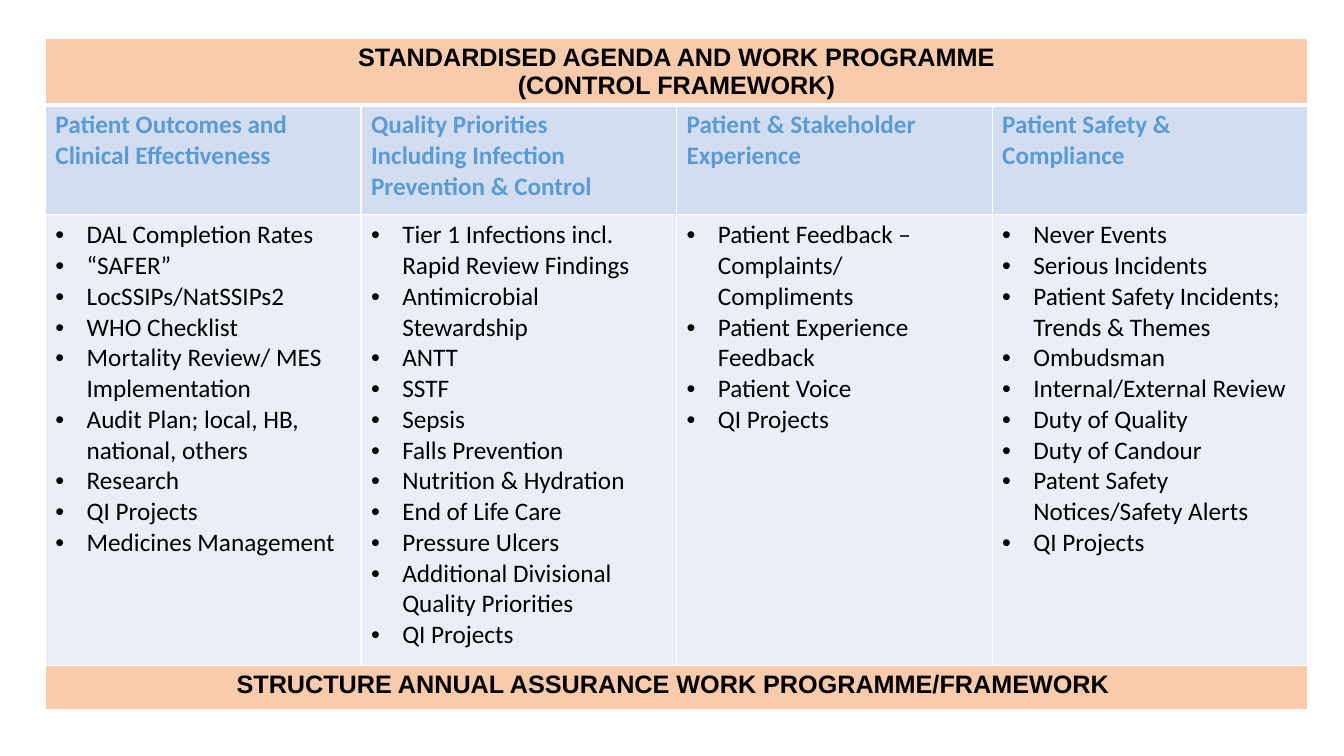
from lxml import etree
from pptx import Presentation
from pptx.dml.color import RGBColor
from pptx.enum import text
from pptx.oxml import ns
from pptx.util import Inches, Pt

BANNER_FILL, HEADING_FILL, TOPIC_FILL = "F8CBAD", "D2DEEF", "EAEFF7"
BLACK, BLUE, WHITE = "000000", "5B9BD5", "FFFFFF"
INDENT = Inches(0.31)

TITLE = ["STANDARDISED AGENDA AND WORK PROGRAMME", "(CONTROL FRAMEWORK)"]
FOOTER = ["STRUCTURE ANNUAL ASSURANCE WORK PROGRAMME/FRAMEWORK "]
COLUMNS = [
    (["Patient Outcomes and Clinical Effectiveness"],
     ["DAL Completion Rates", "“SAFER”", "LocSSIPs/NatSSIPs2", "WHO Checklist",
      "Mortality Review/ MES Implementation",
      "Audit Plan; local, HB, national, others", "Research", "QI Projects",
      "Medicines Management"]),
    (["Quality Priorities", "Including Infection Prevention & Control"],
     ["Tier 1 Infections incl. Rapid Review Findings",
      "Antimicrobial Stewardship", "ANTT", "SSTF", "Sepsis",
      "Falls Prevention", "Nutrition & Hydration", "End of Life Care",
      "Pressure Ulcers", "Additional Divisional Quality Priorities",
      "QI Projects"]),
    (["Patient & Stakeholder Experience"],
     ["Patient Feedback – Complaints/ Compliments",
      "Patient Experience Feedback", "Patient Voice", "QI Projects"]),
    (["Patient Safety & Compliance"],
     ["Never Events", "Serious Incidents",
      "Patient Safety Incidents; Trends & Themes", "Ombudsman",
      "Internal/External Review", "Duty of Quality", "Duty of Candour",
      "Patent Safety Notices/Safety Alerts", "QI Projects"]),
]


def rgb(color):
    return RGBColor.from_string(color)


def write_cell(cell, lines, font="Calibri", color=BLACK, bold=True,
               centred=False, bulleted=False):
    """Put each line in its own paragraph, all in one style."""
    frame = cell.text_frame
    for number, line in enumerate(lines):
        para = frame.add_paragraph() if number else frame.paragraphs[0]
        para.alignment = text.PP_ALIGN.CENTER if centred else text.PP_ALIGN.LEFT
        if bulleted:
            properties = para._p.get_or_add_pPr()
            properties.set("marL", str(INDENT))
            properties.set("indent", str(-INDENT))
            etree.SubElement(properties, ns.qn("a:buFont"), typeface="Arial")
            etree.SubElement(properties, ns.qn("a:buChar"), char="•")
        span = para.add_run()
        span.text = line
        span.font.name = font
        span.font.size = Pt(18)
        span.font.bold = bold
        span.font.color.rgb = rgb(color)


deck = Presentation()
deck.slide_width, deck.slide_height = Inches(13.33), Inches(7.5)
page = deck.slides.add_slide(deck.slide_layouts[6])

table = page.shapes.add_table(4, len(COLUMNS), Inches(0.45), Inches(0.38),
                              Inches(12.53), Inches(6.65)).table
table.first_row = table.horz_banding = False
for column in table.columns:
    column.width = Inches(3.13)
for row, height in zip(table.rows, [0.66, 1.09, 4.47, 0.44]):
    row.height = Inches(height)

# Fills and white rules, with a heavier rule below the title
row_fills = [BANNER_FILL, HEADING_FILL, TOPIC_FILL, BANNER_FILL]
for row_number, fill in enumerate(row_fills):
    for cell in table.rows[row_number].cells:
        cell.fill.solid()
        cell.fill.fore_color.rgb = rgb(fill)
        properties = cell._tc.get_or_add_tcPr()
        for position, side in enumerate(["lnL", "lnR", "lnT", "lnB"]):
            heavy = (row_number, side) in [(0, "lnB"), (1, "lnT")]
            rule = etree.Element(ns.qn(f"a:{side}"), w=str(Pt(3 if heavy else 1)))
            paint = etree.SubElement(rule, ns.qn("a:solidFill"))
            etree.SubElement(paint, ns.qn("a:srgbClr"), val=WHITE)
            properties.insert(position, rule)

for row_number, lines in [(0, TITLE), (3, FOOTER)]:
    banner = table.cell(row_number, 0)
    banner.merge(table.cell(row_number, len(COLUMNS) - 1))
    write_cell(banner, lines, font="Arial", centred=True)

for column_number, (heading, topics) in enumerate(COLUMNS):
    write_cell(table.cell(1, column_number), heading, color=BLUE)
    write_cell(table.cell(2, column_number), topics, bold=False, bulleted=True)

deck.save("out.pptx")
